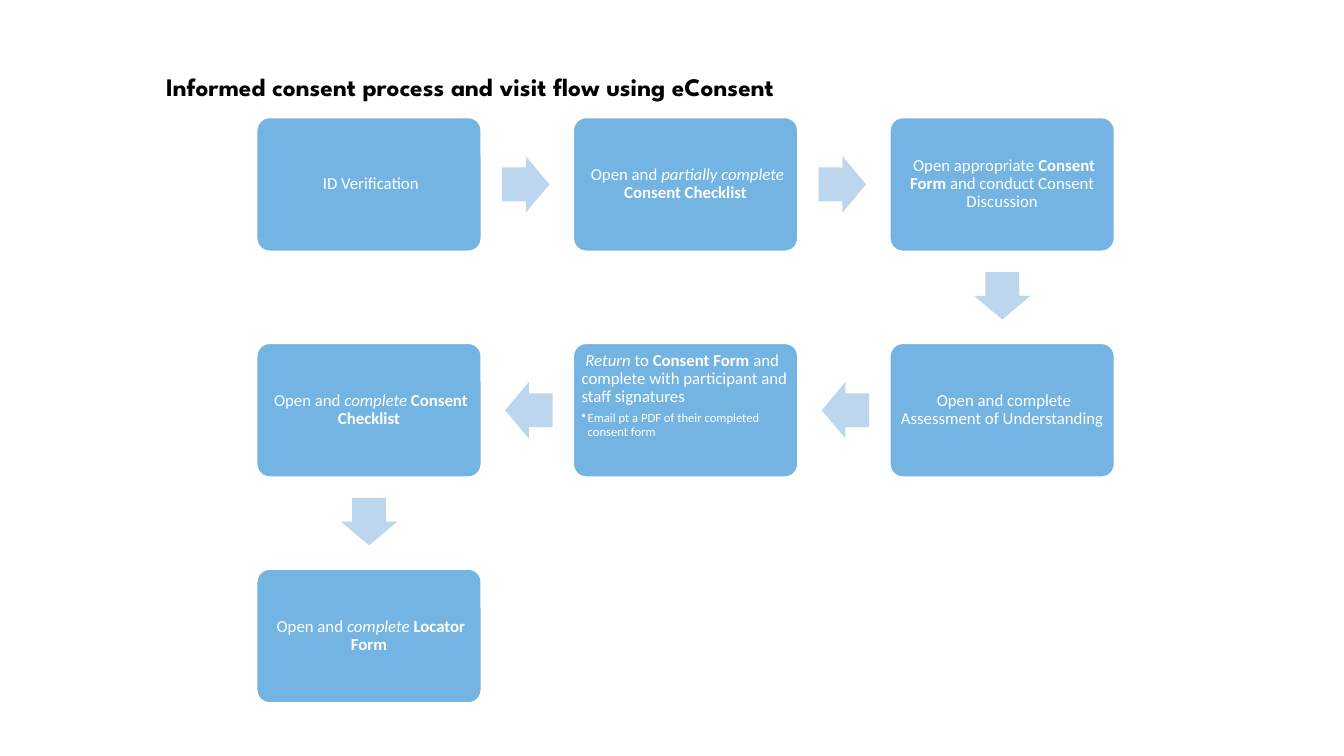
from lxml.etree import SubElement
from pptx import Presentation
from pptx.dml.color import RGBColor
from pptx.enum.shapes import MSO_SHAPE
from pptx.enum.text import MSO_ANCHOR, PP_ALIGN
from pptx.oxml.ns import qn
from pptx.util import Inches, Pt

LEFT, TOP = 2.54, 1.16
WIDE, HIGH = 2.24, 1.34
STEP_X, STEP_Y = 3.14, 2.24
LONG, THICK, GAP = 0.47, 0.56, 0.2

ITALIC, BOLD = {"italic": True}, {"bold": True}
TURN = {(1, 0): 0, (0, 1): 90, (-1, 0): 180}

# Column, row and text runs of each step, in visit order
STEPS = [
    (0, 0, [(" ID Verification", {})]),
    (1, 0, [(" Open and ", {}), ("partially complete ", ITALIC),
            ("Consent Checklist", BOLD)]),
    (2, 0, [(" Open appropriate ", {}), ("Consent Form", BOLD),
            (" and conduct Consent Discussion", {})]),
    (2, 1, [(" Open and complete Assessment of Understanding", {})]),
    (1, 1, [(" ", {}), ("Return ", ITALIC), ("to ", {}), ("Consent Form", BOLD),
            (" and complete with participant and staff signatures", {})]),
    (0, 1, [(" Open and ", {}), ("complete ", ITALIC),
            ("Consent Checklist", BOLD)]),
    (0, 2, [(" Open and ", {}), ("complete ", ITALIC), ("Locator Form", BOLD)]),
]
NOTES = {(1, 1): "Email pt a PDF of their completed consent form"}


def color(code):
    return RGBColor.from_string(code)


def apply(item, values):
    for name, value in values.items():
        setattr(item, name, value)


class Flow:
    """Draws the parts of the visit flow on one slide."""

    box_fill, arrow_fill, white, black = "73B4E2", "BCD6EE", "FFFFFF", "000000"
    body = {"name": "Calibri", "size": Pt(12)}
    small = {"name": "Calibri", "size": Pt(9)}
    head = {"name": "League Spartan", "size": Pt(18), "bold": True}

    def __init__(self, slide):
        self.slide = slide

    def shape(self, kind, x, y, w, h, fill):
        item = self.slide.shapes.add_shape(
            kind, Inches(x), Inches(y), Inches(w), Inches(h))
        item.shadow.inherit = False
        item.fill.solid()
        item.fill.fore_color.rgb = color(fill)
        return item

    def text(self, para, runs, style, tint):
        for words, extra in runs:
            run = para.add_run()
            run.text = words
            apply(run.font, {**style, **extra})
            run.font.color.rgb = color(tint)

    def title(self, words):
        box = self.slide.shapes.add_textbox(
            Inches(1.55), Inches(0.6), Inches(10.89), Inches(0.62))
        apply(box.text_frame, {"word_wrap": True, "margin_top": Inches(0.11),
                               "vertical_anchor": MSO_ANCHOR.TOP})
        self.text(box.text_frame.paragraphs[0], [(words, {})], self.head, self.black)

    def box(self, col, row, runs, note=None):
        item = self.shape(MSO_SHAPE.ROUNDED_RECTANGLE, LEFT + col * STEP_X,
                          TOP + row * STEP_Y, WIDE, HIGH, self.box_fill)
        item.adjustments[0] = 0.1
        item.line.color.rgb = color(self.white)
        item.line.width = Pt(2)
        frame = item.text_frame
        sides = ("left", "right", "top", "bottom")
        apply(frame, {f"margin_{side}": Inches(0.05) for side in sides})
        apply(frame, {"word_wrap": True, "vertical_anchor":
                      MSO_ANCHOR.TOP if note else MSO_ANCHOR.MIDDLE})
        para = frame.paragraphs[0]
        apply(para, {"alignment": PP_ALIGN.LEFT if note else PP_ALIGN.CENTER,
                     "line_spacing": 0.9, "space_after": Pt(4.2)})
        self.text(para, runs, self.body, self.white)
        if note:
            self.bullet(frame.add_paragraph(), note)

    def bullet(self, para, words):
        apply(para, {"alignment": PP_ALIGN.LEFT, "level": 1,
                     "line_spacing": 0.9, "space_after": Pt(1.35)})
        props = para._p.get_or_add_pPr()
        props.set("marL", str(Inches(0.06)))
        props.set("indent", str(Inches(-0.06)))
        SubElement(props, qn("a:buChar")).set("char", "•")
        self.text(para, [(words, {})], self.small, self.white)

    def arrow(self, col, row, dx, dy):
        """Point from the step at col, row towards its neighbour."""
        reach = GAP + LONG / 2
        x = LEFT + col * STEP_X + WIDE / 2 + dx * (WIDE / 2 + reach)
        y = TOP + row * STEP_Y + HIGH / 2 + dy * (HIGH / 2 + reach)
        item = self.shape(MSO_SHAPE.RIGHT_ARROW, x - LONG / 2, y - THICK / 2,
                          LONG, THICK, self.arrow_fill)
        item.adjustments[0] = 0.6
        item.adjustments[1] = 0.5
        item.line.fill.background()
        item.rotation = TURN[dx, dy]


def main():
    deck = Presentation()
    deck.slide_width, deck.slide_height = Inches(13.33), Inches(7.5)
    flow = Flow(deck.slides.add_slide(deck.slide_layouts[6]))
    flow.title("Informed consent process and visit flow using eConsent")
    for col, row, runs in STEPS:
        flow.box(col, row, runs, NOTES.get((col, row)))
    for (col, row, _), (to_col, to_row, _) in zip(STEPS, STEPS[1:]):
        flow.arrow(col, row, to_col - col, to_row - row)
    deck.save("out.pptx")


if __name__ == "__main__":
    main()
